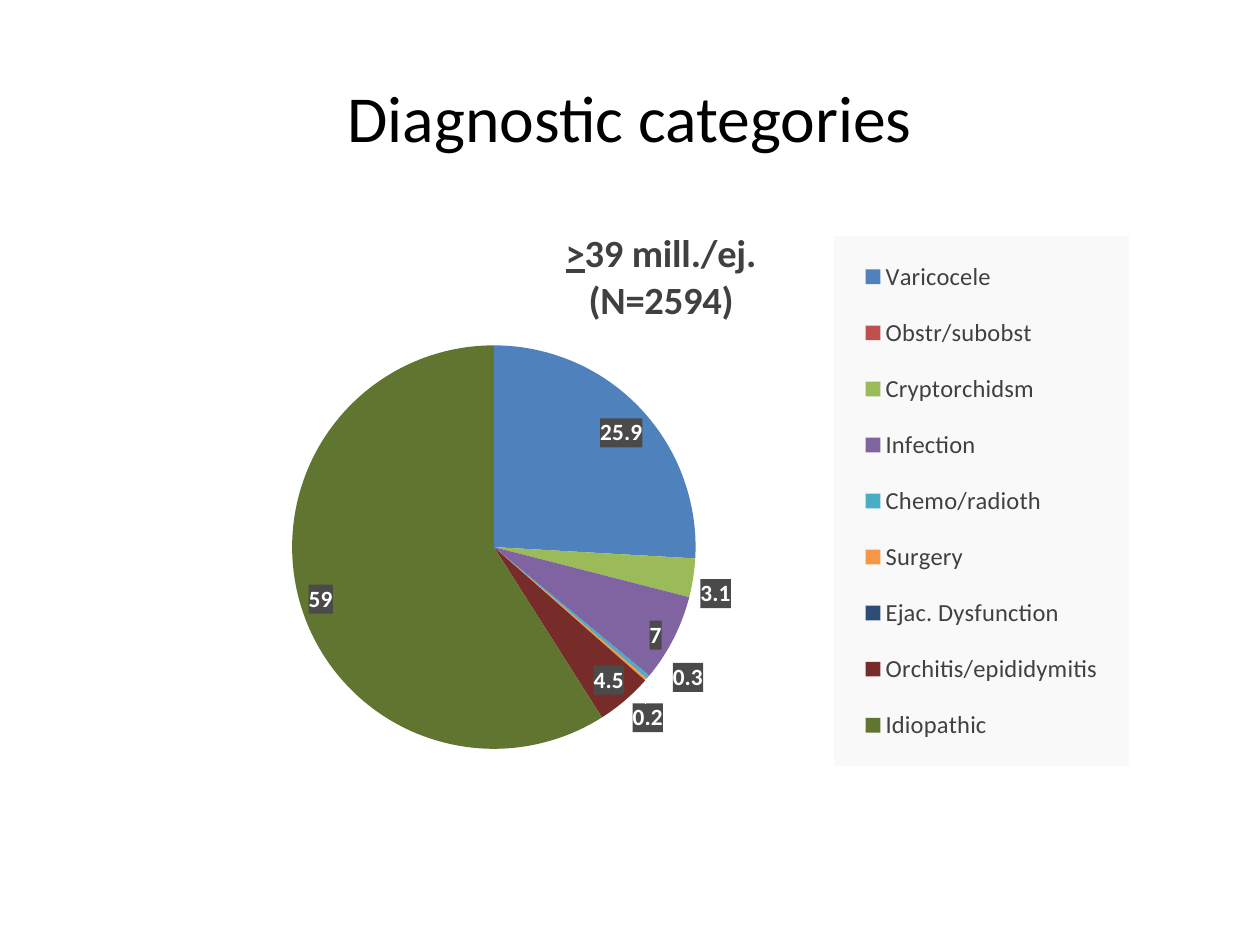
from dataclasses import dataclass

from lxml import etree
from pptx import Presentation
from pptx.chart.data import CategoryChartData
from pptx.dml.color import RGBColor
from pptx.enum.chart import XL_CHART_TYPE, XL_LABEL_POSITION, XL_LEGEND_POSITION
from pptx.enum.text import MSO_ANCHOR, PP_ALIGN
from pptx.oxml import parse_xml
from pptx.oxml.ns import nsdecls, qn
from pptx.util import Inches, Pt

PIE = XL_CHART_TYPE.PIE
BEST_FIT = XL_LABEL_POSITION.BEST_FIT
RIGHT = XL_LEGEND_POSITION.RIGHT
MIDDLE, CENTER = MSO_ANCHOR.MIDDLE, PP_ALIGN.CENTER
TITLE_ONLY = 5
WIDTH, HEIGHT = 10, 7.5


@dataclass(frozen=True)
class Theme:
    font: str = "Calibri"
    black: str = "000000"
    grey: str = "404040"
    white: str = "FFFFFF"
    legend_fill: str = "F9F9F9"
    label_fill: str = "4A4A4A"
    title: float = 37.5
    chart_title: float = 22
    legend: float = 14
    label: float = 13.3
    base: float = 10


THEME = Theme()

# Category, value and slice colour
DIAGNOSES = [
    ("Varicocele", 25.9, "4F81BD"),
    ("Obstr/subobst", 0, "C0504D"),
    ("Cryptorchidsm", 3.1, "9BBB59"),
    ("Infection", 7, "8064A2"),
    ("Chemo/radioth", 0.3, "4BACC6"),
    ("Surgery", 0.2, "F79646"),
    ("Ejac. Dysfunction", 0, "2C4D75"),
    ("Orchitis/epididymitis", 4.5, "772C2A"),
    ("Idiopathic", 59, "5F7530"),
]


def set_font(font, size, color, **extra):
    values = {"name": THEME.font, "size": Pt(size), **extra}
    for key, value in values.items():
        setattr(font, key, value)
    font.color.rgb = RGBColor.from_string(color)


def share_box(x, y, w, h):
    """Place an object by shares of the slide's size."""
    return Inches(x * WIDTH), Inches(y * HEIGHT), Inches(w * WIDTH), Inches(h * HEIGHT)


def chart_layout(after, inner=False, **shares):
    """Place a chart part by shares of the chart's size, following a sibling."""
    parent = after.getparent()
    for old in parent.findall(qn("c:layout")):
        parent.remove(old)
    layout = parse_xml(f"<c:layout {nsdecls('c')}><c:manualLayout/></c:layout>")
    manual = layout[0]
    settings = {"layoutTarget": "inner"} if inner else {}
    settings.update(xMode="edge", yMode="edge", **shares)
    for tag, value in settings.items():
        etree.SubElement(manual, qn(f"c:{tag}")).set("val", str(value))
    after.addnext(layout)


def fill_behind(after, color):
    """Give a legend or its labels a plain background."""
    after.addnext(parse_xml(
        f'<c:spPr {nsdecls("c", "a")}><a:solidFill><a:srgbClr val="{color}"/>'
        "</a:solidFill><a:ln><a:noFill/></a:ln></c:spPr>"))


def add_title(s, text):
    sp = s.shapes.title
    sp.left, sp.top, sp.width, sp.height = share_box(0.05, 0.04, 0.9, 1 / 6)
    tf = sp.text_frame
    tf.vertical_anchor = MIDDLE
    p = tf.paragraphs[0]
    p.alignment = CENTER
    r = p.add_run()
    r.text = text
    set_font(r.font, THEME.title, THEME.black)


def add_pie(s):
    data = CategoryChartData()
    data.categories = [name for name, _, _ in DIAGNOSES]
    data.add_series("Series 1", [value for _, value, _ in DIAGNOSES])
    frame = s.shapes.add_chart(PIE, *share_box(0.059, 0.213, 0.9, 0.61), data)
    chart = frame.chart
    set_font(chart.font, THEME.base, THEME.black)
    plot = chart.plots[0]
    plot.vary_by_categories = True
    for i, (_, _, color) in enumerate(DIAGNOSES):
        fill = plot.series[0].points[i].format.fill
        fill.solid()
        fill.fore_color.rgb = RGBColor.from_string(color)
    return chart


def style_chart_title(chart):
    chart.has_title = True
    title = chart.chart_title
    title.include_in_layout = False
    tf = title.text_frame
    lines = [[(">", True), ("39 mill./ej.", False)], [("(N=2594)", False)]]
    for i, line in enumerate(lines):
        p = tf.add_paragraph() if i else tf.paragraphs[0]
        p.alignment = CENTER
        for text, underline in line:
            r = p.add_run()
            r.text = text
            set_font(r.font, THEME.chart_title, THEME.grey, bold=True, underline=underline)
    chart_layout(tf._txBody.getparent(), x=0.43, y=0.04)


def style_legend(chart):
    chart.has_legend = True
    legend = chart.legend
    legend.position = RIGHT
    legend.include_in_layout = False
    set_font(legend.font, THEME.legend, THEME.grey)
    element = legend._element
    chart_layout(element.find(qn("c:legendPos")), x=0.67, y=0.06, w=0.26, h=0.92)
    fill_behind(element.find(qn("c:overlay")), THEME.legend_fill)


def style_labels(chart):
    labels = chart.plots[0].series[0].data_labels
    labels.show_value = True
    labels.position = BEST_FIT
    # Zero values carry no label
    labels.number_format = "General;;"
    labels.number_format_is_linked = False
    set_font(labels.font, THEME.label, THEME.white, bold=True)
    fill_behind(labels._element.find(qn("c:numFmt")), THEME.label_fill)


def place_pie(chart):
    area = chart._chartSpace.chart.plotArea
    layout = area.find(qn("c:layout"))
    if layout is None:
        layout = etree.Element(qn("c:layout"))
        area.insert(0, layout)
    # A temporary sibling marks the start of the plot area
    marker = etree.Element(qn("c:extLst"))
    layout.addprevious(marker)
    chart_layout(marker, inner=True, x=0.19, y=0.25, w=0.36, h=0.7)
    area.remove(marker)


def main():
    prs = Presentation()
    prs.slide_width, prs.slide_height = Inches(WIDTH), Inches(HEIGHT)
    s = prs.slides.add_slide(prs.slide_layouts[TITLE_ONLY])
    add_title(s, "Diagnostic categories")
    chart = add_pie(s)
    style_chart_title(chart)
    style_legend(chart)
    style_labels(chart)
    place_pie(chart)
    prs.save("out.pptx")


if __name__ == "__main__":
    main()
